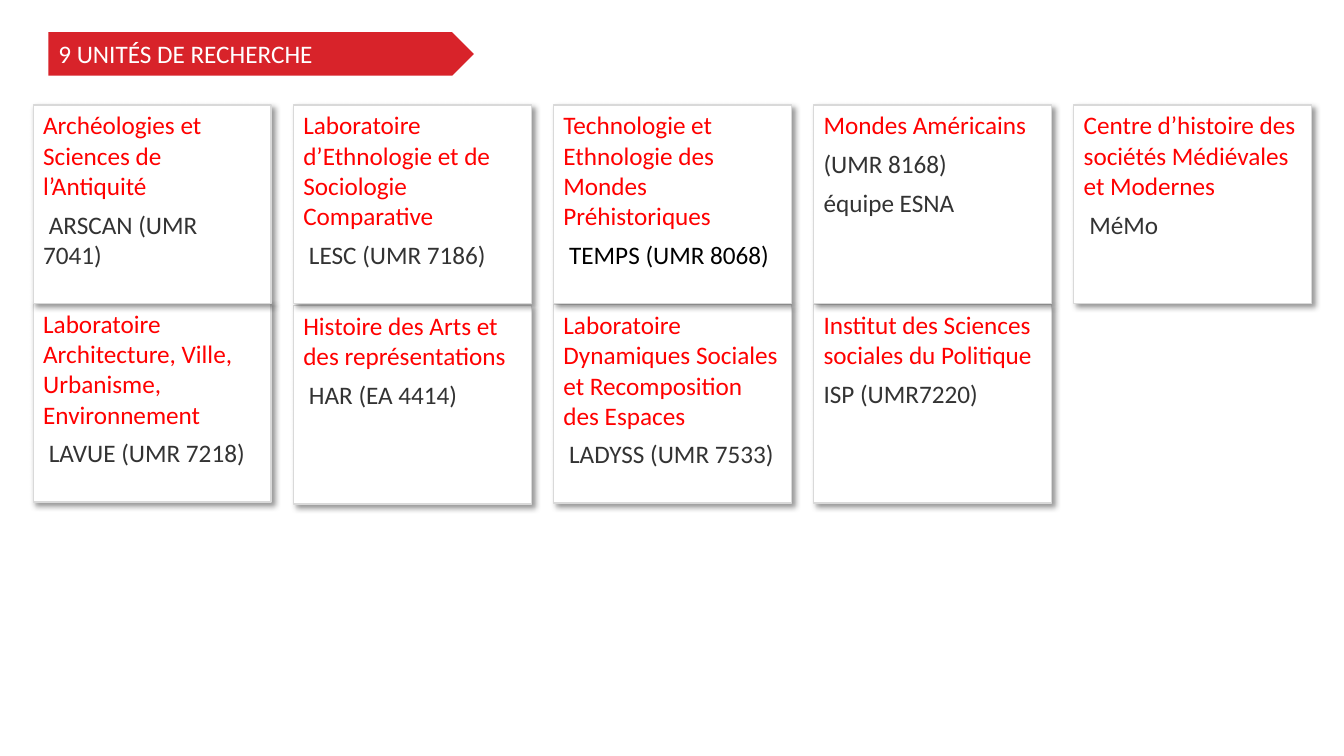
from lxml import etree
from pptx import Presentation
from pptx import util as u
from pptx.dml.color import RGBColor
from pptx.enum import shapes, text
from pptx.oxml.ns import qn

TITLE = "9 UNITÉS DE RECHERCHE"
# One (name, details) pair per unit, left to right
TOP_ROW = [
    ("Archéologies et Sciences de l’Antiquité", [" ARSCAN (UMR 7041)"]),
    ("Laboratoire d’Ethnologie et de Sociologie Comparative", [" LESC (UMR 7186)"]),
    ("Technologie et Ethnologie des Mondes Préhistoriques", [" TEMPS (UMR 8068)"]),
    ("Mondes Américains", ["(UMR 8168)", "équipe ESNA"]),
    ("Centre d’histoire des sociétés Médiévales et Modernes", [" MéMo"]),
]
BOTTOM_ROW = [
    ("Laboratoire Architecture, Ville, Urbanisme, Environnement", [" LAVUE (UMR 7218)"]),
    ("Histoire des Arts et des représentations", [" HAR (EA 4414)"]),
    ("Laboratoire Dynamiques Sociales et Recomposition des Espaces",
     [" LADYSS (UMR 7533)"]),
    ("Institut des Sciences sociales du Politique", ["ISP (UMR7220)"]),
]
BLACK_DETAILS = {" TEMPS (UMR 8068)"}
COLORS = {"banner": "D8232A", "card": "FFFFFF", "border": "D9D9D9", "name": "FF0000",
          "detail": "333333", "black": "000000", "title": "FFFFFF"}

LEFT, PITCH, CARD_W, CARD_H = 0.33, 2.58, 2.36, 1.97
TOP_Y = [1.04] * 5
BOTTOM_Y = [3.01, 3.03, 3.02, 3.02]


def color(key):
    return RGBColor.from_string(COLORS[key])


def add_box(s, preset, x, y, w, h, fill):
    sp = s.shapes.add_shape(preset, *map(u.Inches, (x, y, w, h)))
    sp.fill.solid()
    sp.fill.fore_color.rgb = color(fill)
    sp.line.fill.background()
    sp.shadow.inherit = False
    sp.text_frame.word_wrap = True
    return sp


def add_text(p, words, key):
    p.alignment = text.PP_ALIGN.LEFT
    r = p.add_run()
    r.text = words
    r.font.name = "Calibri"
    r.font.size = u.Pt(18)
    r.font.color.rgb = color(key)


def add_shadow(sp):
    """Drop shadow towards the lower right, 40 % black."""
    effects = sp._element.spPr.find(qn("a:effectLst"))
    shadow = etree.SubElement(effects, qn("a:outerShdw"), blurRad=str(u.Pt(4)),
                              dist=str(u.Pt(3)), dir=str(45 * 60000),
                              algn="tl", rotWithShape="0")
    tone = etree.SubElement(shadow, qn("a:srgbClr"), val=COLORS["black"])
    etree.SubElement(tone, qn("a:alpha"), val="40000")


def add_card(s, x, y, name, details):
    sp = add_box(s, shapes.MSO_SHAPE.RECTANGLE, x, y, CARD_W, CARD_H, "card")
    sp.line.color.rgb = color("border")
    sp.line.width = u.Pt(1)
    add_shadow(sp)
    tf = sp.text_frame
    tf.vertical_anchor = text.MSO_ANCHOR.TOP
    lines = [(name, "name")]
    lines += [(d, "black" if d in BLACK_DETAILS else "detail") for d in details]
    for i, (words, key) in enumerate(lines):
        p = tf.add_paragraph() if i else tf.paragraphs[0]
        p.space_before = u.Pt(6)
        add_text(p, words, key)


def main():
    prs = Presentation()
    prs.slide_width, prs.slide_height = u.Inches(13.33), u.Inches(7.5)
    s = prs.slides.add_slide(prs.slide_layouts[6])

    # The bottom row lies behind, so the top row casts its shadow on it
    for units, tops in ((BOTTOM_ROW, BOTTOM_Y), (TOP_ROW, TOP_Y)):
        for col, ((name, details), y) in enumerate(zip(units, tops)):
            add_card(s, LEFT + col * PITCH, y, name, details)

    banner = add_box(s, shapes.MSO_SHAPE.PENTAGON, 0.48, 0.32, 4.22, 0.43, "banner")
    banner.text_frame.vertical_anchor = text.MSO_ANCHOR.MIDDLE
    add_text(banner.text_frame.paragraphs[0], TITLE, "title")

    prs.save("out.pptx")


if __name__ == "__main__":
    main()
